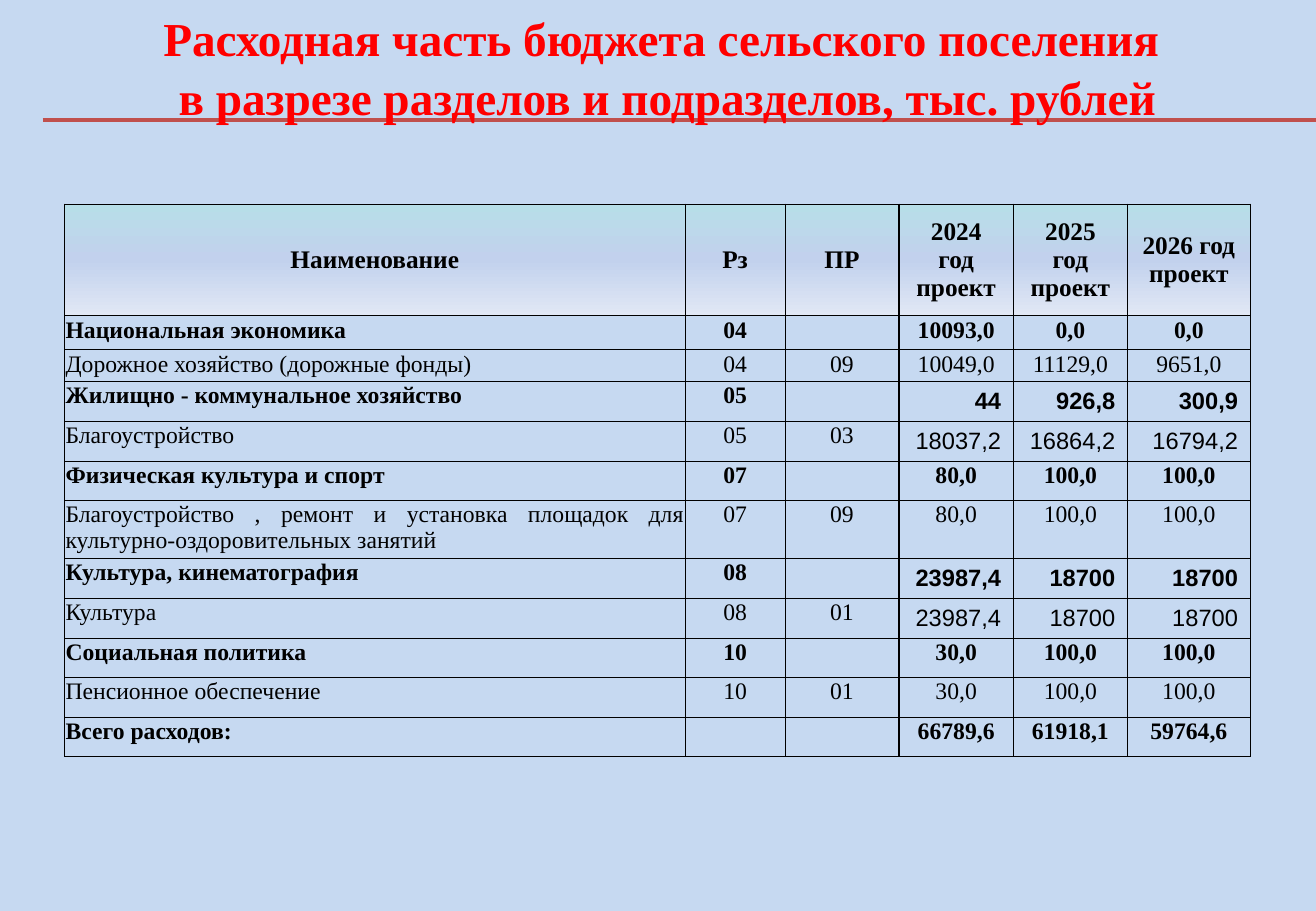
from lxml.etree import SubElement
from pptx import Presentation
from pptx.dml.color import RGBColor
from pptx.enum.shapes import MSO_CONNECTOR
from pptx.enum.text import MSO_ANCHOR, PP_ALIGN
from pptx.oxml.ns import qn
from pptx.util import Inches, Pt


def color(hex_code):
    return RGBColor.from_string(hex_code)


def add_run(paragraph, text, size, bold, hex_code="000000", face="Times New Roman"):
    run = paragraph.add_run()
    run.text = text
    run.font.name = face
    run.font.size = Pt(size)
    run.font.bold = bold
    run.font.color.rgb = color(hex_code)


budget = Presentation()
budget.slide_width, budget.slide_height = Inches(10.83), Inches(7.5)
slide = budget.slides.add_slide(budget.slide_layouts[5])
slide.background.fill.solid()
slide.background.fill.fore_color.rgb = color("C6D9F1")

# Red rule under the title
rule = slide.shapes.add_connector(
    MSO_CONNECTOR.STRAIGHT, Inches(0.35), Inches(0.99), Inches(10.83), Inches(0.99))
rule.line.color.rgb = color("C0504D")
rule.line.width = Pt(2.5)
SubElement(rule._element.spPr, qn("a:effectLst"))

# Title, in front of the rule
title = slide.shapes.title
title.left, title.top = Inches(0.46), Inches(0)
title.width, title.height = Inches(10.06), Inches(1.04)
slide.shapes._spTree.append(title._element)
heading = title.text_frame
heading.word_wrap = True
heading.vertical_anchor = MSO_ANCHOR.TOP
heading.margin_left = heading.margin_right = Inches(0.09)
heading.margin_top = heading.margin_bottom = Inches(0.05)
heading_line = heading.paragraphs[0]
heading_line.alignment = PP_ALIGN.CENTER
heading_line.line_spacing = 1.05
add_run(heading_line, "Расходная часть бюджета сельского поселения ", 28, True, "FF0000")
heading_line.add_line_break()
add_run(heading_line, "в разрезе разделов и подразделов, тыс. рублей", 28, True, "FF0000")

# Budget table: header, then sections (no subsection code) and subsections
header = ["Наименование", "Рз", "ПР", "2024 год\nпроект", "2025 год проект", "2026 год\nпроект"]
expenses = [
    ["Национальная экономика", "04", "", "10093,0", "0,0", "0,0"],
    ["Дорожное хозяйство (дорожные фонды) ", "04", "09", "10049,0", "11129,0", "9651,0"],
    ["Жилищно - коммунальное хозяйство", "05", "", "44", "926,8", "300,9"],
    ["Благоустройство", "05", "03", "18037,2", "16864,2", "16794,2"],
    ["Физическая культура и спорт", "07", "", "80,0", "100,0", "100,0"],
    ["Благоустройство , ремонт и установка площадок для культурно-оздоровительных занятий",
     "07", "09", "80,0", "100,0", "100,0"],
    ["Культура, кинематография ", "08", "", "23987,4", "18700", "18700"],
    ["Культура ", "08", "01", "23987,4", "18700", "18700"],
    ["Социальная политика", "10", "", "30,0", "100,0", "100,0"],
    ["Пенсионное обеспечение", "10", "01", "30,0", "100,0", "100,0"],
    ["Всего расходов:", "", "", "66789,6", "61918,1", "59764,6"],
]
column_widths = [5.11, 0.82, 0.94, 0.94, 0.94, 1.01]
row_heights = [0.92, 0.28, 0.26, 0.33, 0.33, 0.32, 0.48, 0.33, 0.33, 0.32, 0.33, 0.32]
arial_rows = {3, 4, 7, 8}
header_gradient = [(0, "B7DEE8"), (50, "C2D1ED"), (100, "E1E8F5")]

table = slide.shapes.add_table(
    len(row_heights), len(column_widths), Inches(0.53), Inches(1.68),
    Inches(sum(column_widths)), Inches(sum(row_heights))).table
table.horz_banding = False
for column, width in zip(table.columns, column_widths):
    column.width = Inches(width)
for row, height in zip(table.rows, row_heights):
    row.height = Inches(height)

for r, entries in enumerate([header] + expenses):
    is_header = r == 0
    bold = is_header or not entries[2]
    for c, entry in enumerate(entries):
        cell = table.cell(r, c)
        is_arial = r in arial_rows and c > 2

        # Insets, anchor and alignment
        if is_header:
            side, top, bottom = 0.09, 0.08, 0.08
        elif is_arial:
            side, top, bottom = 0.1, 0.05, 0.05
        else:
            side, top, bottom = 0.01, 0.01, 0
        cell.margin_left = cell.margin_right = Inches(side)
        cell.margin_top, cell.margin_bottom = Inches(top), Inches(bottom)
        cell.vertical_anchor = MSO_ANCHOR.MIDDLE if is_header or is_arial else MSO_ANCHOR.TOP
        if is_arial:
            alignment = PP_ALIGN.RIGHT
        elif c == 0 and not is_header:
            alignment = PP_ALIGN.JUSTIFY
        else:
            alignment = PP_ALIGN.CENTER

        # Text
        for i, text in enumerate(entry.split("\n")):
            line = cell.text_frame.add_paragraph() if i else cell.text_frame.paragraphs[0]
            line.alignment = alignment
            if text:
                add_run(line, text, 15 if is_header else 14, bold,
                        face="Arial" if is_arial else "Times New Roman")
            else:
                SubElement(line._p, qn("a:endParaRPr"), sz="1400")

        # Borders: heavier under the header and at every second column edge
        properties = cell._tc.get_or_add_tcPr()
        heavy = {"lnL": c % 2 == 1, "lnR": c % 2 == 0, "lnT": r == 1, "lnB": is_header}
        for edge, is_heavy in heavy.items():
            border = SubElement(properties, qn("a:" + edge), w=str(Pt(1 if is_heavy else 0.5)))
            SubElement(SubElement(border, qn("a:solidFill")), qn("a:srgbClr"), val="000000")

        # Fill
        if is_header:
            gradient = SubElement(properties, qn("a:gradFill"), rotWithShape="1")
            stops = SubElement(gradient, qn("a:gsLst"))
            for position, hex_code in header_gradient:
                stop = SubElement(stops, qn("a:gs"), pos=str(position * 1000))
                SubElement(stop, qn("a:srgbClr"), val=hex_code)
            SubElement(gradient, qn("a:lin"), ang="5400000", scaled="0")
        else:
            cell.fill.background()

budget.save("out.pptx")
